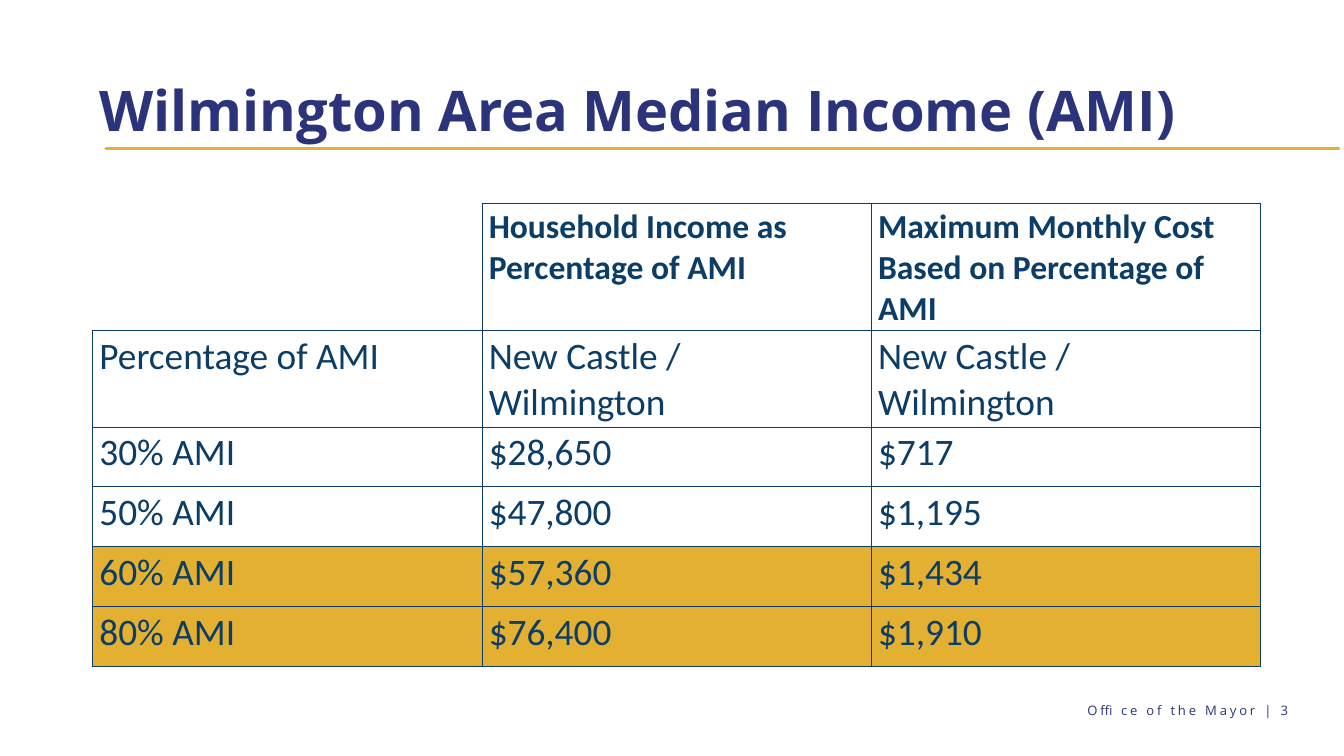
import pptx
import pptx.dml.color
import pptx.enum.shapes
import pptx.enum.text
import pptx.oxml
import pptx.oxml.ns
import pptx.util

WIDTH, HEIGHT = 20, 11.25
INDIGO, NAVY, BORDER, GOLD = "2B347B", "0C3D67", "0E3C67", "E4B031"

TITLE = "Wilmington Area Median Income (AMI)"
FOOTER = "Office of the Mayor | 3"
ROWS = [
    ("", "Household Income as Percentage of AMI",
     "Maximum Monthly Cost Based on Percentage of AMI"),
    ("Percentage of AMI", "New Castle / Wilmington", "New Castle / Wilmington"),
    ("30% AMI", "$28,650", "$717"),
    ("50% AMI", "$47,800", "$1,195"),
    ("60% AMI", "$57,360", "$1,434"),
    ("80% AMI", "$76,400", "$1,910"),
]
HIGHLIGHTED = ("60% AMI", "80% AMI")

LEFT = 1.38
TITLE_AREA = (LEFT, 0.6, 17.25, 2.17)
FOOTER_AREA = (14.84, 10.46, 4.33, 0.24)
RULE_START, RULE_END, RULE_TOP = 1.58, 19.92, 2.21
TABLE_TOP, TABLE_WIDTH = 3.02, 17.38
HEADER_HEIGHT, ROW_HEIGHT = 1.61, 0.89

TITLE_FORMAT = {"name": "Open Sans", "size": pptx.util.Pt(60), "bold": True}
FOOTER_FORMAT = {"name": "Open Sans", "size": pptx.util.Pt(14), "bold": False}
HEADER_FORMAT = {"name": "Calibri", "size": pptx.util.Pt(36), "bold": True}
BODY_FORMAT = {"name": "Calibri", "size": pptx.util.Pt(40), "bold": False}


def inches(*lengths):
    return [pptx.util.Inches(length) for length in lengths]


def rgb(color):
    return pptx.dml.color.RGBColor.from_string(color)


def write(frame, text, color, formats):
    """Put text in the frame's first paragraph and return its paragraph and run."""
    para = frame.paragraphs[0]
    span = para.add_run()
    span.text = text
    span.font.color.rgb = rgb(color)
    for name, value in formats.items():
        setattr(span.font, name, value)
    return para, span


def add_borders(cell, hidden):
    """Draw 1 pt lines on all sides of a cell except the hidden ones."""
    properties = cell._tc.get_or_add_tcPr()
    for side in "LRTB":
        if side in hidden:
            fill = "<a:noFill/>"
        else:
            fill = f'<a:solidFill><a:srgbClr val="{BORDER}"/></a:solidFill>'
        properties.append(pptx.oxml.parse_xml(
            f'<a:ln{side} {pptx.oxml.ns.nsdecls("a")} w="12700">{fill}</a:ln{side}>'))


def add_title(slide):
    title = slide.shapes.title
    title.left, title.top, title.width, title.height = inches(*TITLE_AREA)
    title.text_frame.vertical_anchor = pptx.enum.text.MSO_ANCHOR.MIDDLE
    para, _ = write(title.text_frame, TITLE, INDIGO, TITLE_FORMAT)
    para.alignment = pptx.enum.text.PP_ALIGN.LEFT
    para.line_spacing = 0.9


def add_rule(slide):
    rule = slide.shapes.add_connector(
        pptx.enum.shapes.MSO_CONNECTOR.STRAIGHT,
        *inches(RULE_START, RULE_TOP, RULE_END, RULE_TOP))
    rule.line.color.rgb = rgb(GOLD)
    rule.line.width = pptx.util.Pt(4)
    rule.line._ln.set("cap", "rnd")
    rule._element.spPr.append(
        pptx.oxml.parse_xml(f'<a:effectLst {pptx.oxml.ns.nsdecls("a")}/>'))


def add_income_table(slide):
    body_height = ROW_HEIGHT * (len(ROWS) - 1)
    table = slide.shapes.add_table(
        len(ROWS), len(ROWS[0]),
        *inches(LEFT, TABLE_TOP, TABLE_WIDTH, HEADER_HEIGHT + body_height)).table
    table.first_row = table.horz_banding = False
    for row_index, texts in enumerate(ROWS):
        is_header = row_index == 0
        table.rows[row_index].height = pptx.util.Inches(
            HEADER_HEIGHT if is_header else ROW_HEIGHT)
        for column_index, text in enumerate(texts):
            cell = table.cell(row_index, column_index)
            add_borders(cell, hidden="" if text else "LT")
            if texts[0] in HIGHLIGHTED:
                cell.fill.solid()
                cell.fill.fore_color.rgb = rgb(GOLD)
            else:
                cell.fill.background()
            if text:
                write(cell.text_frame, text, NAVY,
                      HEADER_FORMAT if is_header else BODY_FORMAT)


def add_footer(slide):
    frame = slide.shapes.add_textbox(*inches(*FOOTER_AREA)).text_frame
    frame.word_wrap = True
    frame.auto_size = pptx.enum.text.MSO_AUTO_SIZE.SHAPE_TO_FIT_TEXT
    for side in ("left", "top", "right", "bottom"):
        setattr(frame, f"margin_{side}", 0)
    para, span = write(frame, FOOTER, INDIGO, FOOTER_FORMAT)
    para.alignment = pptx.enum.text.PP_ALIGN.RIGHT
    span.font._element.set("spc", "300")


def main():
    deck = pptx.Presentation()
    deck.slide_width, deck.slide_height = inches(WIDTH, HEIGHT)
    slide = deck.slides.add_slide(deck.slide_layouts[5])
    add_title(slide)
    add_footer(slide)
    add_rule(slide)
    add_income_table(slide)
    deck.save("out.pptx")


if __name__ == "__main__":
    main()
